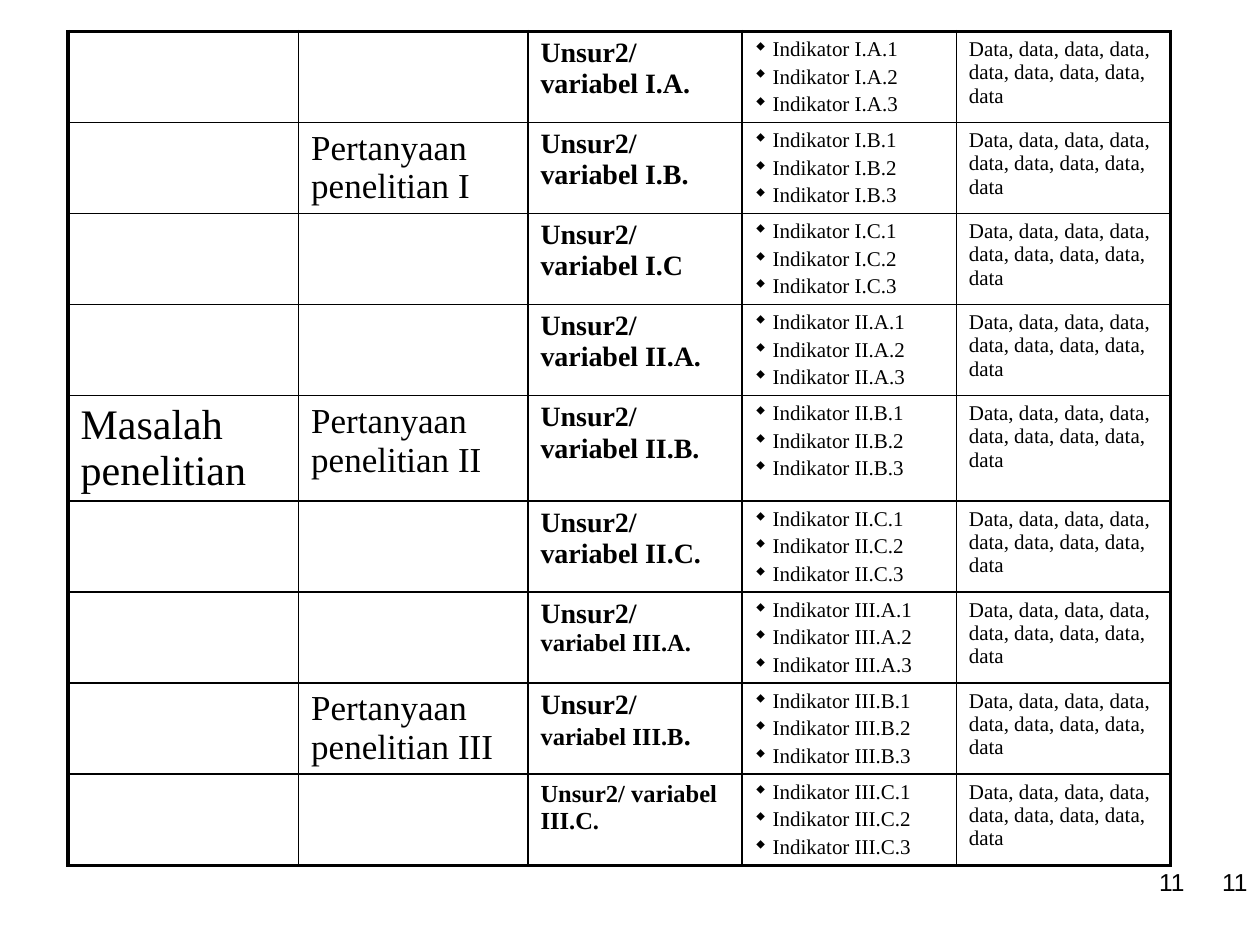
import pptx
import pptx.util
import pptx.dml.color
import pptx.enum.text
import pptx.oxml
import pptx.oxml.ns
import lxml.etree

Inches, Pt = pptx.util.Inches, pptx.util.Pt
qn = pptx.oxml.ns.qn

# Content: runs are (text, size); each row is (problem, question, variable, code)
PROBLEM = [("Masalah penelitian", 24)]
DATA = ", ".join(["data"] * 9).capitalize()


def question(numeral):
    return [(f"Pertanyaan penelitian {numeral}", 20)]


ROWS = [
    ([], [], [("Unsur2/ variabel I.A.", 16)], "I.A"),
    ([], question("I"), [("Unsur2/ variabel I.B.", 16)], "I.B"),
    ([], [], [("Unsur2/ variabel I.C", 16)], "I.C"),
    ([], [], [("Unsur2/ variabel II.A.", 16)], "II.A"),
    (PROBLEM, question("II"), [("Unsur2/ variabel II.B.", 16)], "II.B"),
    ([], [], [("Unsur2/ variabel II.C.", 16)], "II.C"),
    ([], [], [("Unsur2/ ", 16), ("variabel III.A.", 14)], "III.A"),
    ([], question("III"),
     [("Unsur2/ ", 16), ("variabel III.B", 14), (".", 16)], "III.B"),
    ([], [], [("Unsur2/ variabel III.C.", 14)], "III.C"),
]
PAGE_NUMBERS = [(7.92, 2.08), (7.17, 2.33)]  # left, width
COLUMNS = [1.83, 1.82, 1.7, 1.7, 1.7]
ROW_HEIGHT, PROBLEM_HEIGHT = 0.72, 0.83
THIN, THICK = 1, 2.25
BLACK = "000000"


def color(hex_value):
    return pptx.dml.color.RGBColor.from_string(hex_value)


def add_xml(parent, tag, **attrs):
    return lxml.etree.SubElement(parent, qn(tag), attrs)


def add_runs(p, runs, font="Times New Roman", bold=False):
    for text, size in runs:
        r = p.add_run()
        r.text = text
        r.font.color.rgb = color(BLACK)
        for name, value in {"name": font, "size": Pt(size), "bold": bold}.items():
            setattr(r.font, name, value)


def space_before(p, percent):
    spacing = add_xml(p._p.get_or_add_pPr(), "a:spcBef")
    add_xml(spacing, "a:spcPct", val=str(percent * 1000))


def add_bullet(p):
    # In the Wingdings symbol font the letter w is a black diamond
    pPr = p._p.get_or_add_pPr()
    add_xml(add_xml(pPr, "a:buClr"), "a:srgbClr", val=BLACK)
    add_xml(pPr, "a:buFont", typeface="Wingdings", pitchFamily="2", charset="2")
    add_xml(pPr, "a:buChar", char="w")


def set_borders(cell, widths):
    tcPr = cell._tc.get_or_add_tcPr()
    for i, (side, width) in enumerate(widths.items()):
        ln = pptx.oxml.parse_xml(
            f'<a:{side} {pptx.oxml.ns.nsdecls("a")} w="{Pt(width)}">'
            f'<a:solidFill><a:srgbClr val="{BLACK}"/></a:solidFill></a:{side}>')
        tcPr.insert(i, ln)


def fill_cell(cell, paragraphs, bold=False, bullets=False):
    tf = cell.text_frame
    for i, runs in enumerate(paragraphs):
        p = tf.add_paragraph() if i else tf.paragraphs[0]
        space_before(p, 20)
        if bullets:
            add_bullet(p)
        add_runs(p, runs, bold=bold)


def add_research_table(s):
    heights = [PROBLEM_HEIGHT if row[0] else ROW_HEIGHT for row in ROWS]
    last_row, last_col = len(ROWS) - 1, len(COLUMNS) - 1
    table = s.shapes.add_table(
        len(ROWS), len(COLUMNS), Inches(0.54), Inches(0.25),
        Inches(sum(COLUMNS)), Inches(sum(heights))).table
    table.first_row = table.horz_banding = False
    for column, width in zip(table.columns, COLUMNS):
        column.width = Inches(width)
    for row, height in zip(table.rows, heights):
        row.height = Inches(height)

    for i, (problem, asked, variable, code) in enumerate(ROWS):
        indicators = [[(f" Indikator {code}.{n}", 12)] for n in (1, 2, 3)]
        contents = [[problem], [asked], [variable], indicators, [[(DATA, 12)]]]
        for j, paragraphs in enumerate(contents):
            cell = table.cell(i, j)
            cell.fill.background()
            fill_cell(cell, paragraphs, bold=j == 2, bullets=j == 3)
            # Thick lines run only round the outside
            edges = {"lnL": j == 0, "lnR": j == last_col,
                     "lnT": i == 0, "lnB": i == last_row}
            set_borders(cell, {side: THICK if outer else THIN
                               for side, outer in edges.items()})


def add_page_number(s, left, width):
    tf = s.shapes.add_textbox(Inches(left), Inches(6.83),
                              Inches(width), Inches(0.5)).text_frame
    tf.word_wrap = True
    p = tf.paragraphs[0]
    p.alignment = pptx.enum.text.PP_ALIGN.RIGHT
    add_runs(p, [("11", 14)], font="Arial")


def main():
    prs = pptx.Presentation()
    prs.slide_width, prs.slide_height = Inches(10), Inches(7.5)
    s = prs.slides.add_slide(prs.slide_layouts[6])
    add_research_table(s)
    for left, width in PAGE_NUMBERS:
        add_page_number(s, left, width)
    prs.save("out.pptx")


if __name__ == "__main__":
    main()
